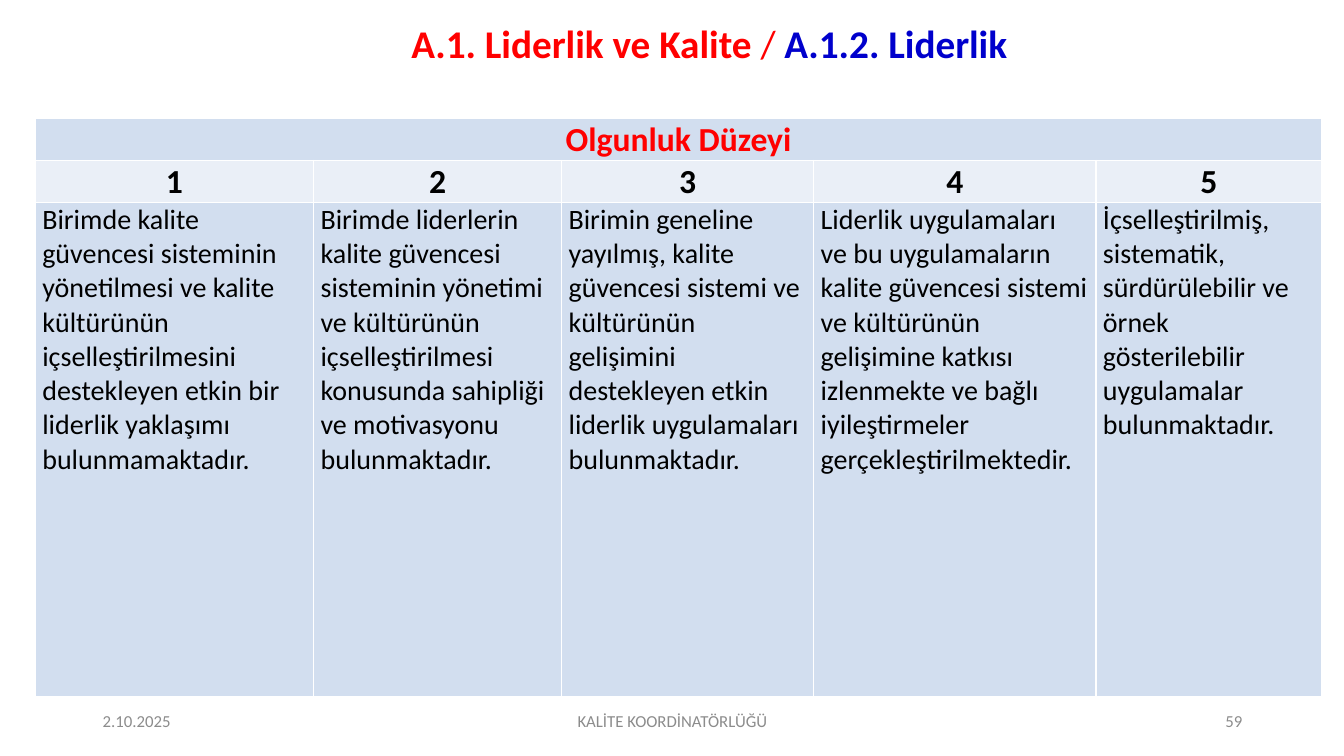
from lxml import etree
from pptx import Presentation
from pptx.dml.color import RGBColor
from pptx.enum import text as t
from pptx.oxml import ns
from pptx.util import Inches, Pt

RED, BLUE, BLACK, GREY, WHITE = "FF0000", "0000CC", "000000", "8C8C8C", "FFFFFF"
DARK_BAND, LIGHT_BAND = "D2DEEF", "EAEFF7"
LEFT, CENTER, RIGHT = t.PP_ALIGN.LEFT, t.PP_ALIGN.CENTER, t.PP_ALIGN.RIGHT

COLUMN_WIDTHS = [2.76, 2.46, 2.5, 2.8, 2.24]
ROW_HEIGHTS = [0.42, 0.42, 4.9]
LEVELS = [
    "Birimde kalite güvencesi sisteminin yönetilmesi ve kalite kültürünün "
    "içselleştirilmesini destekleyen etkin bir liderlik yaklaşımı bulunmamaktadır.",
    "Birimde liderlerin kalite güvencesi sisteminin yönetimi ve kültürünün "
    "içselleştirilmesi konusunda sahipliği ve motivasyonu bulunmaktadır.",
    "Birimin geneline yayılmış, kalite güvencesi sistemi ve kültürünün gelişimini "
    "destekleyen etkin liderlik uygulamaları bulunmaktadır.",
    "Liderlik uygulamaları ve bu uygulamaların kalite güvencesi sistemi ve kültürünün "
    "gelişimine katkısı izlenmekte ve bağlı iyileştirmeler gerçekleştirilmektedir.",
    "İçselleştirilmiş, sistematik, sürdürülebilir ve örnek gösterilebilir "
    "uygulamalar bulunmaktadır.",
]


def rgb(color):
    return RGBColor.from_string(color)


def set_font(font, size, color, bold=False):
    font.name = "Calibri"
    font.size = Pt(size)
    font.bold = bold
    font.color.rgb = rgb(color)


def add_line(slide, left, top, width, height, align):
    """Add a one-paragraph text box, centred vertically, and return its paragraph."""
    frame = slide.shapes.add_textbox(*map(Inches, (left, top, width, height))).text_frame
    frame.word_wrap = True
    frame.vertical_anchor = t.MSO_ANCHOR.MIDDLE
    paragraph = frame.paragraphs[0]
    paragraph.alignment = align
    return paragraph


def add_title(slide):
    title = add_line(slide, 0.96, 0.14, 12.15, 0.62, CENTER)
    title.line_spacing = 0.9
    for wording, color, bold in [("A.1. Liderlik ve Kalite ", RED, True),
                                 ("/ ", RED, False),
                                 ("A.1.2. Liderlik", BLUE, True)]:
        run = title.add_run()
        run.text = wording
        set_font(run.font, 28, color, bold)


def add_footer(slide, wording, left, width, align):
    footer = add_line(slide, left, 6.95, width, 0.4, align)
    footer.text = wording
    set_font(footer.font, 12, GREY)


def add_borders(cell):
    properties = cell._tc.get_or_add_tcPr()
    for side in ("a:lnL", "a:lnR", "a:lnT", "a:lnB"):
        line = etree.SubElement(properties, ns.qn(side), w=str(Pt(1)))
        fill = etree.SubElement(line, ns.qn("a:solidFill"))
        etree.SubElement(fill, ns.qn("a:srgbClr"), val=WHITE)


def style_cell(cell, fill):
    add_borders(cell)
    cell.fill.solid()
    cell.fill.fore_color.rgb = rgb(fill)
    cell.margin_left = cell.margin_right = Inches(0.07)
    cell.margin_top = cell.margin_bottom = 0


def write_cell(cell, wording, size, color, bold, align, anchor):
    cell.vertical_anchor = anchor
    paragraph = cell.text_frame.paragraphs[0]
    paragraph.text = wording
    paragraph.alignment = align
    paragraph.space_after = Pt(4)
    set_font(paragraph.font, size, color, bold)


def add_maturity_table(slide):
    table = slide.shapes.add_table(
        len(ROW_HEIGHTS), len(COLUMN_WIDTHS), Inches(0.35), Inches(1.17),
        Inches(sum(COLUMN_WIDTHS)), Inches(sum(ROW_HEIGHTS))).table
    table.first_row = table.horz_banding = False
    for column, width in zip(table.columns, COLUMN_WIDTHS):
        column.width = Inches(width)
    for index, (row, height) in enumerate(zip(table.rows, ROW_HEIGHTS)):
        row.height = Inches(height)
        for cell in row.cells:
            style_cell(cell, LIGHT_BAND if index % 2 else DARK_BAND)

    bottom, top = t.MSO_ANCHOR.BOTTOM, t.MSO_ANCHOR.TOP
    heading = table.cell(0, 0)
    heading.merge(table.cell(0, len(COLUMN_WIDTHS) - 1))
    write_cell(heading, "Olgunluk Düzeyi", 24, RED, True, CENTER, bottom)
    for index, description in enumerate(LEVELS):
        write_cell(table.cell(1, index), str(index + 1), 24, BLACK, True, CENTER, bottom)
        write_cell(table.cell(2, index), description, 20, BLACK, False, LEFT, top)


def main():
    deck = Presentation()
    deck.slide_width, deck.slide_height = Inches(13.33), Inches(7.5)
    slide = deck.slides.add_slide(deck.slide_layouts[6])
    add_title(slide)
    add_maturity_table(slide)
    add_footer(slide, "2.10.2025", 0.92, 3, LEFT)
    add_footer(slide, "KALİTE KOORDİNATÖRLÜĞÜ", 4.42, 4.5, CENTER)
    add_footer(slide, "59", 9.42, 3, RIGHT)
    deck.save("out.pptx")


if __name__ == "__main__":
    main()
